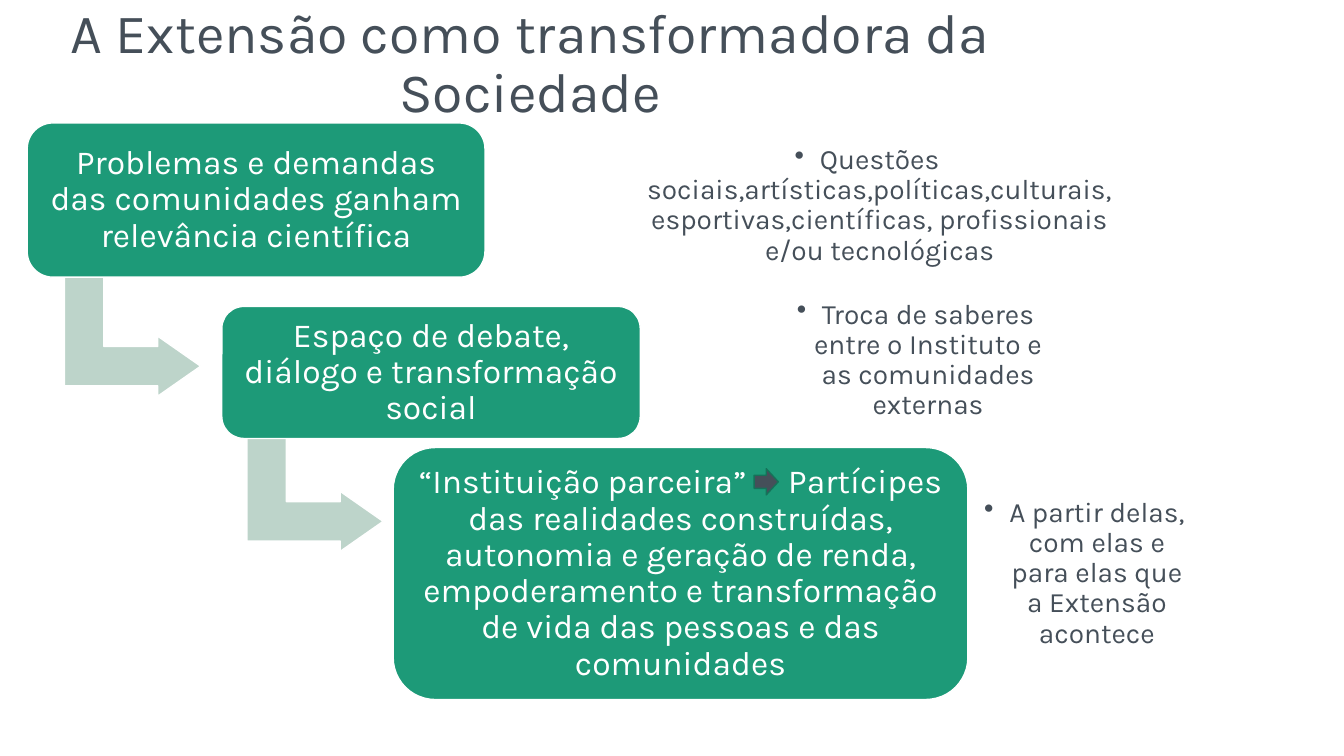
from pptx import Presentation
from pptx.dml.color import RGBColor
from pptx.enum.shapes import MSO_SHAPE
from pptx.enum.text import MSO_ANCHOR, PP_ALIGN
from pptx.oxml.ns import qn
from pptx.util import Inches, Pt
from lxml import etree

ROUND_BOX = MSO_SHAPE.ROUNDED_RECTANGLE
BENT_ARROW = MSO_SHAPE.BENT_UP_ARROW
RIGHT_ARROW = MSO_SHAPE.RIGHT_ARROW
MIDDLE = MSO_ANCHOR.MIDDLE
CENTER = PP_ALIGN.CENTER

WHITE = RGBColor(0xFF, 0xFF, 0xFF)
SLATE = RGBColor(0x45, 0x4F, 0x59)
GREEN = RGBColor(0x1D, 0x9A, 0x78)
PALE_GREEN = RGBColor(0xBD, 0xD4, 0xCA)
DARK_GREEN = RGBColor(0x15, 0x72, 0x59)

presentation = Presentation()
presentation.slide_width = Inches(13.33)
presentation.slide_height = Inches(7.5)
slide = presentation.slides.add_slide(presentation.slide_layouts[6])


def add_block(kind, frame, fill, line):
    shape = slide.shapes.add_shape(kind, *[Inches(value) for value in frame])
    shape.shadow.inherit = False
    shape.fill.solid()
    shape.fill.fore_color.rgb = fill
    shape.line.color.rgb = line
    shape.line.width = Pt(1)
    return shape


def write_text(shape, runs, size, color, inset, bullet=False):
    frame = shape.text_frame
    frame.word_wrap = True
    frame.vertical_anchor = MIDDLE
    frame.margin_left = frame.margin_right = Inches(inset)
    frame.margin_top = frame.margin_bottom = Inches(min(inset, 0.1))
    paragraph = frame.paragraphs[0]
    paragraph.alignment = CENTER
    paragraph.line_spacing = 0.9
    if bullet:
        properties = paragraph._p.get_or_add_pPr()
        properties.set("marL", str(Inches(0.25)))
        properties.set("indent", str(Inches(-0.25)))
        etree.SubElement(properties, qn("a:buChar")).set("char", "•")
    for text in runs:
        run = paragraph.add_run()
        run.text = text
        run.font.name = "Karla"
        run.font.size = Pt(size)
        run.font.color.rgb = color
        if text == " ":
            run.font._element.set("spc", "2400")


title = slide.shapes.add_textbox(Inches(0.27), Inches(0.24), Inches(9.98), Inches(0.81))
write_text(title, ["A Extensão como transformadora da Sociedade"], 39.6, SLATE, 0.1)

steps = [
    ((0.27, 1.22, 4.54, 1.53),
     ["Problemas e demandas das comunidades ganham relevância científica"],
     (6, 1.23, 5.2, 1.62),
     "Questões sociais,artísticas,políticas,culturais, esportivas,científicas, "
     "profissionais e/ou tecnológicas",
     (0.72, 2.66)),
    ((2.2, 3.04, 4.15, 1.31),
     ["Espaço de debate, diálogo e transformação social"],
     (7.72, 2.94, 2.72, 1.27),
     "Troca de saberes entre o Instituto e as comunidades externas",
     (2.53, 4.2)),
    ((3.9, 4.44, 5.7, 2.5),
     ["“Instituição parceira”", " ",
      "Partícipes das realidades construídas, autonomia e geração de renda, "
      "empoderamento e transformação de vida das pessoas e das comunidades"],
     (9.62, 5.03, 2.27, 1.32),
     "A partir delas, com elas e para elas que a Extensão acontece",
     None),
]

for box_frame, box_runs, note_frame, note_text, arrow_corner in steps:
    if arrow_corner:
        step_arrow = add_block(BENT_ARROW, (*arrow_corner, 1.19, 1.35), PALE_GREEN, WHITE)
        step_arrow.rotation = 90
        for index, value in enumerate((0.328, 0.25, 0.358)):
            step_arrow.adjustments[index] = value
    box = add_block(ROUND_BOX, box_frame, GREEN, WHITE)
    write_text(box, box_runs, 24, WHITE, 0.1)
    note = slide.shapes.add_textbox(*[Inches(value) for value in note_frame])
    write_text(note, [note_text], 20, SLATE, 0.08, bullet=True)

add_block(RIGHT_ARROW, (7.48, 4.65, 0.24, 0.26), SLATE, DARK_GREEN)

presentation.save("out.pptx")
